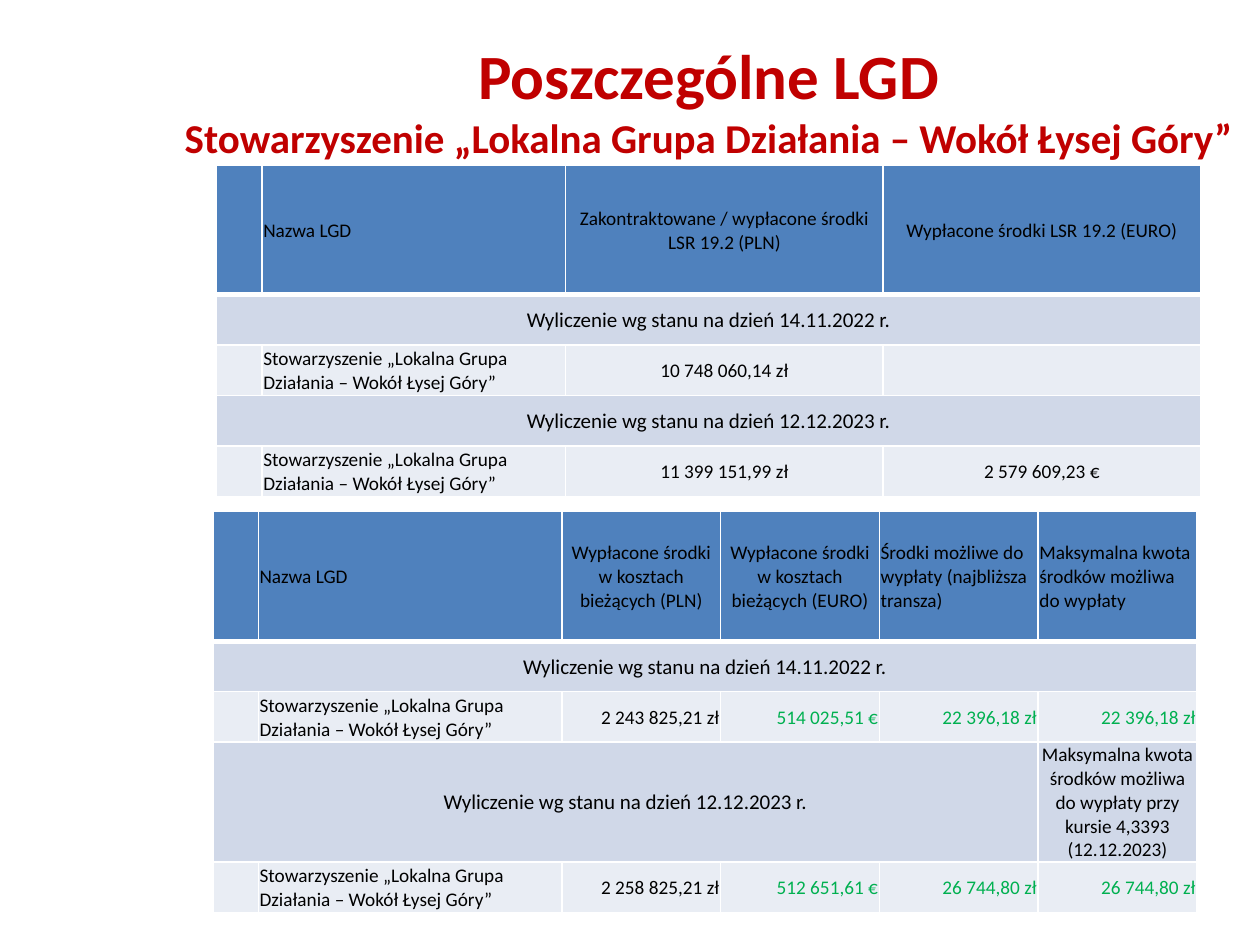
from lxml import etree
from pptx import Presentation
from pptx.dml.color import RGBColor
from pptx.enum.text import MSO_ANCHOR, MSO_AUTO_SIZE, PP_ALIGN
from pptx.oxml.ns import qn
from pptx.util import Inches, Pt

LEFT, CENTER, RIGHT = PP_ALIGN.LEFT, PP_ALIGN.CENTER, PP_ALIGN.RIGHT
TOP, MIDDLE = MSO_ANCHOR.TOP, MSO_ANCHOR.MIDDLE
NO_AUTOFIT = MSO_AUTO_SIZE.NONE
FONT = "Calibri"
RED, BLACK, GREEN, WHITE = "C00000", "000000", "00B050", "FFFFFF"
HEADER_FILL, BAND_FILL, ROW_FILL = "4F81BD", "D0D8E8", "E9EDF4"
GROUP = "Stowarzyszenie „Lokalna Grupa Działania – Wokół Łysej Góry”"
BAND_2022 = "Wyliczenie wg stanu na dzień 14.11.2022 r."
BAND_2023 = "Wyliczenie wg stanu na dzień 12.12.2023 r."


def add_run(paragraph, text, size, color, bold=False):
    run = paragraph.add_run()
    run.text = text
    run.font.name = FONT
    run.font.size = Pt(size)
    run.font.bold = bold
    run.font.color.rgb = RGBColor.from_string(color)


def add_border(cell, side, width):
    properties = cell._tc.get_or_add_tcPr()
    line = etree.SubElement(properties, qn(f"a:ln{side}"), w=str(Pt(width)))
    fill = etree.SubElement(line, qn("a:solidFill"))
    etree.SubElement(fill, qn("a:srgbClr"), val=WHITE)


presentation = Presentation()
presentation.slide_width = Inches(10)
presentation.slide_height = Inches(7.5)
slide = presentation.slides.add_slide(presentation.slide_layouts[5])

title = slide.shapes.title
title.left, title.top = Inches(1.33), Inches(0.13)
title.width, title.height = Inches(8.59), Inches(1.18)
frame = title.text_frame
frame.word_wrap = True
frame.auto_size = NO_AUTOFIT
frame.vertical_anchor = TOP
frame.margin_left = frame.margin_right = Inches(0.05)
frame.margin_top = Inches(0.16)
frame.margin_bottom = 0
for index, (text, size) in enumerate([("Poszczególne LGD", 36), (GROUP, 23.4)]):
    paragraph = frame.add_paragraph() if index else frame.paragraphs[0]
    paragraph.alignment = CENTER
    add_run(paragraph, text, size, RED, True)

tables = [
    {
        "position": (1.69, 4.06),
        "widths": [0.36, 2.41] + [1.26] * 4,
        "heights": [1.03, 0.4, 0.4, 0.95, 0.4],
        "header_alignments": [LEFT, LEFT, CENTER, CENTER, LEFT, LEFT],
        "value_alignment": RIGHT,
        "value_colors": [BLACK, BLACK, BLACK, GREEN, GREEN, GREEN],
        "spans": {1: 6, 3: 5},
        "rows": [
            ["", "Nazwa LGD", "Wypłacone środki w kosztach bieżących (PLN)",
             "Wypłacone środki w kosztach bieżących (EURO)",
             "Środki możliwe do wypłaty (najbliższa transza)",
             "Maksymalna kwota środków możliwa do wypłaty"],
            [BAND_2022, "", "", "", "", ""],
            ["", GROUP, "2 243 825,21 zł", "514 025,51 €", "22 396,18 zł", "22 396,18 zł"],
            [BAND_2023, "", "", "", "",
             "Maksymalna kwota środków możliwa do wypłaty przy kursie 4,3393 (12.12.2023)"],
            ["", GROUP, "2 258 825,21 zł", "512 651,61 €", "26 744,80 zł", "26 744,80 zł"],
        ],
    },
    {
        "position": (1.72, 1.31),
        "widths": [0.36, 2.41, 2.52, 2.52],
        "heights": [1.03, 0.4, 0.4, 0.4, 0.4],
        "header_alignments": [LEFT, LEFT, CENTER, CENTER],
        "value_alignment": CENTER,
        "value_colors": [BLACK] * 4,
        "spans": {1: 4, 3: 4},
        "rows": [
            ["", "Nazwa LGD", "Zakontraktowane / wypłacone środki LSR 19.2 (PLN)",
             "Wypłacone środki LSR 19.2 (EURO)"],
            [BAND_2022, "", "", ""],
            ["", GROUP, "10 748 060,14 zł", ""],
            [BAND_2023, "", "", ""],
            ["", GROUP, "11 399 151,99 zł", "2 579 609,23 €"],
        ],
    },
]

for data in tables:
    widths, heights = data["widths"], data["heights"]
    left, top = data["position"]
    table = slide.shapes.add_table(
        len(heights), len(widths), Inches(left), Inches(top),
        Inches(sum(widths)), Inches(sum(heights))).table
    table.horz_banding = False
    for column, width in zip(table.columns, widths):
        column.width = Inches(width)
    for row, height in zip(table.rows, heights):
        row.height = Inches(height)

    for row_index, texts in enumerate(data["rows"]):
        is_band = row_index in data["spans"]
        fill = HEADER_FILL if row_index == 0 else BAND_FILL if is_band else ROW_FILL
        for column_index, text in enumerate(texts):
            cell = table.cell(row_index, column_index)
            cell.vertical_anchor = MIDDLE
            cell.margin_left = cell.margin_right = cell.margin_top = Inches(0.01)
            cell.margin_bottom = 0
            for side in "LRTB":
                thick = (row_index, side) in [(0, "B"), (1, "T")]
                add_border(cell, side, 3 if thick else 1)
            cell.fill.solid()
            cell.fill.fore_color.rgb = RGBColor.from_string(fill)
            if not text:
                continue
            size, color = 11, BLACK
            if row_index == 0:
                alignment = data["header_alignments"][column_index]
            elif is_band:
                alignment = CENTER
                size = 12 if column_index == 0 else 11
            else:
                alignment = LEFT if column_index == 1 else data["value_alignment"]
                color = data["value_colors"][column_index]
            paragraph = cell.text_frame.paragraphs[0]
            paragraph.alignment = alignment
            add_run(paragraph, text, size, color)
    for row_index, span in data["spans"].items():
        table.cell(row_index, 0).merge(table.cell(row_index, span - 1))

presentation.save("out.pptx")
